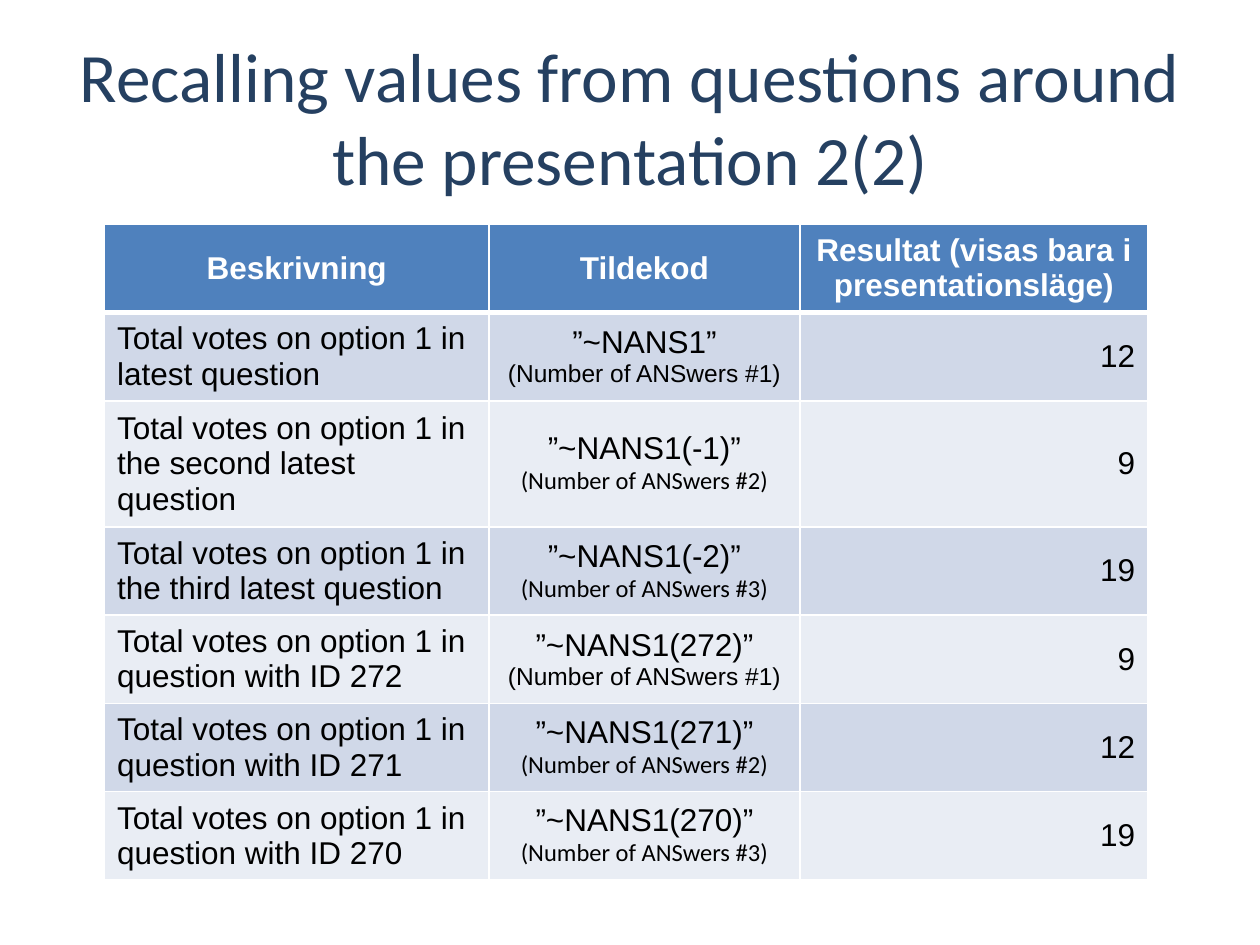
from lxml import etree
from pptx import Presentation
from pptx.dml.color import RGBColor
from pptx.enum.text import MSO_ANCHOR, PP_ALIGN
from pptx.oxml.ns import qn
from pptx.util import Inches, Pt

LEFT, CENTER, RIGHT = PP_ALIGN.LEFT, PP_ALIGN.CENTER, PP_ALIGN.RIGHT
MIDDLE = MSO_ANCHOR.MIDDLE
HEADER_FILL, BANDS = "4F81BD", ("D0D8E8", "E9EDF4")
WHITE, BLACK, NAVY = "FFFFFF", "000000", "254061"

TITLE = "Recalling values from questions around the presentation 2(2)"
HEADERS = ("Beskrivning", "Tildekod", "Resultat (visas bara i presentationsläge)")
COLUMN_WIDTHS = (3.05, 2.47, 2.76)
# Question, code argument, answer number, font of the explanation, result
VOTES = (
    ("latest question", "", 1, "Arial", 12),
    ("the second latest question", "(-1)", 2, "Calibri", 9),
    ("the third latest question", "(-2)", 3, "Calibri", 19),
    ("question with ID 272", "(272)", 1, "Arial", 9),
    ("question with ID 271", "(271)", 2, "Calibri", 12),
    ("question with ID 270", "(270)", 3, "Calibri", 19),
)


def color(value):
    return RGBColor.from_string(value)


def write(para, text, size=18, font="Arial", fill=BLACK, bold=False, align=LEFT):
    para.alignment = align
    span = para.add_run()
    span.text = text
    span.font.size = Pt(size)
    span.font.name = font
    span.font.bold = bold
    span.font.color.rgb = color(fill)


def add_border(cell, side, width):
    line = etree.SubElement(cell._tc.get_or_add_tcPr(), qn(f"a:ln{side}"), w=str(Pt(width)))
    fill = etree.SubElement(line, qn("a:solidFill"))
    etree.SubElement(fill, qn("a:srgbClr"), val=WHITE)


def style_cell(cell, fill, top=1, bottom=1):
    for side, width in (("L", 1), ("R", 1), ("T", top), ("B", bottom)):
        add_border(cell, side, width)
    cell.fill.solid()
    cell.fill.fore_color.rgb = color(fill)
    cell.vertical_anchor = MIDDLE


def add_title(page, left, top, width, height):
    box = page.shapes.add_textbox(left, top, width, height)
    frame = box.text_frame
    frame.word_wrap = True
    frame.vertical_anchor = MIDDLE
    write(frame.paragraphs[0], TITLE, size=39.6, font="Calibri", fill=NAVY, align=CENTER)


def add_votes_table(page, left, top, width, height):
    row_count = len(VOTES) + 1
    table = page.shapes.add_table(row_count, len(HEADERS), left, top, width, height).table
    for column, column_width in zip(table.columns, COLUMN_WIDTHS):
        column.width = Inches(column_width)

    # Header row, with a heavier rule below
    for index, heading in enumerate(HEADERS):
        cell = table.cell(0, index)
        style_cell(cell, HEADER_FILL, bottom=3)
        write(cell.text_frame.paragraphs[0], heading, fill=WHITE, bold=True, align=CENTER)

    # Banded body rows
    for row, (question, argument, number, font, result) in enumerate(VOTES, start=1):
        cells = [table.cell(row, index) for index in range(len(HEADERS))]
        for cell in cells:
            style_cell(cell, BANDS[(row - 1) % 2], top=3 if row == 1 else 1)
        description, code, value = (cell.text_frame for cell in cells)
        write(description.paragraphs[0], f"Total votes on option 1 in {question}")
        write(code.paragraphs[0], f"”~NANS1{argument}”", align=CENTER)
        write(code.add_paragraph(), f"(Number of ANSwers #{number})",
              size=14, font=font, align=CENTER)
        write(value.paragraphs[0], str(result), align=RIGHT)


def main():
    deck = Presentation()
    deck.slide_width, deck.slide_height = Inches(10), Inches(7.5)
    page = deck.slides.add_slide(deck.slide_layouts[6])
    add_title(page, Inches(0.5), Inches(0.3), Inches(9), Inches(1.25))
    add_votes_table(page, Inches(0.83), Inches(1.78), Inches(8.28), Inches(4.9))
    deck.save("out.pptx")


if __name__ == "__main__":
    main()
